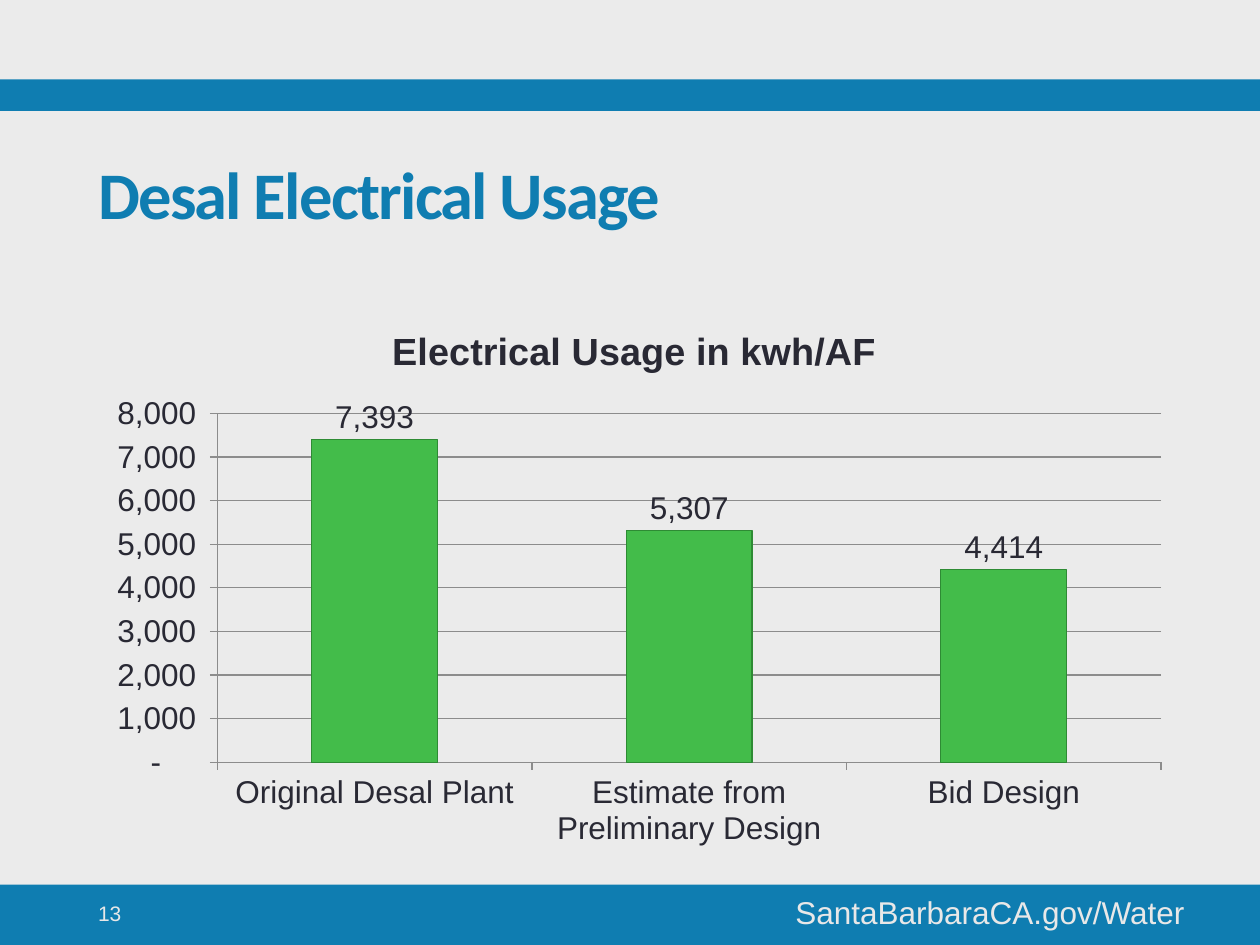
"""Build the slide that compares desal electrical usage in a column chart."""
import dataclasses

import pptx
import pptx.chart.data
import pptx.dml.color
import pptx.enum.chart
import pptx.enum.shapes
import pptx.enum.text
import pptx.oxml
import pptx.util

Inches = pptx.util.Inches
Pt = pptx.util.Pt
Align = pptx.enum.text.PP_ALIGN
Anchor = pptx.enum.text.MSO_ANCHOR


def rgb(code):
    return pptx.dml.color.RGBColor.from_string(code)


@dataclasses.dataclass(frozen=True)
class Theme:
    back: object = rgb("EBEBEB")
    blue: object = rgb("0F7DB1")
    pale: object = rgb("E8E8E8")
    ink: object = rgb("292934")
    grid: object = rgb("8C8C8C")
    green: object = rgb("43BC4A")
    edge: object = rgb("2E8B34")
    head: object = Pt(38)
    title: object = Pt(21.6)
    body: object = Pt(18)
    small: object = Pt(12)


theme = Theme()
deck = pptx.Presentation()
deck.slide_width, deck.slide_height = Inches(10), Inches(7.5)
slide = deck.slides.add_slide(deck.slide_layouts[6])
slide.background.fill.solid()
slide.background.fill.fore_color.rgb = theme.back


def add_text(text, *, box, size, color, font="Arial", bold=False,
             align=Align.LEFT, anchor=Anchor.MIDDLE, space=None):
    frame = slide.shapes.add_textbox(*map(Inches, box)).text_frame
    frame.word_wrap = True
    frame.vertical_anchor = anchor
    para = frame.paragraphs[0]
    para.alignment = align
    run = para.add_run()
    run.text = text
    run.font.name, run.font.size, run.font.bold = font, size, bold
    run.font.color.rgb = color
    if space is not None:
        run.font._element.set("spc", str(space))


for top, high in ((0.63, 0.25), (7.02, 0.48)):
    band = slide.shapes.add_shape(
        pptx.enum.shapes.MSO_SHAPE.RECTANGLE,
        Inches(0), Inches(top), deck.slide_width, Inches(high))
    band.shadow.inherit = False
    band.fill.solid()
    band.fill.fore_color.rgb = theme.blue
    band.line.fill.background()

add_text("SantaBarbaraCA.gov/Water", box=(5.4, 7.04, 4.1, 0.4),
         size=theme.body, color=theme.pale, align=Align.RIGHT)
add_text("Desal Electrical Usage", box=(0.68, 0.88, 8.7, 1.02),
         size=theme.head, color=theme.blue, font="Calibri", bold=True,
         anchor=Anchor.BOTTOM, space=-100)
add_text("13", box=(0.68, 7.05, 0.88, 0.4), size=theme.small, color=theme.pale)

name = "Electrical Usage in kwh/AF"
style = '_(* #,##0_);_(* \\(#,##0\\);_(* "-"??_);_('
data = pptx.chart.data.CategoryChartData(number_format=style)
data.categories = ["Original Desal Plant", "Estimate from Preliminary Design", "Bid Design"]
data.add_series(name, (7393, 5307, 4414))
chart = slide.shapes.add_chart(
    pptx.enum.chart.XL_CHART_TYPE.COLUMN_CLUSTERED,
    *map(Inches, (0.68, 2.4, 8.71, 4.4)), data).chart
chart.has_legend = False
chart.font.name, chart.font.size = "Arial", theme.body
chart.font.color.rgb = theme.ink
chart.has_title = True
chart.chart_title.include_in_layout = False
chart.chart_title.text_frame.text = name
font = chart.chart_title.text_frame.paragraphs[0].runs[0].font
font.name, font.size, font.bold = "Arial", theme.title, True
font.color.rgb = theme.ink

scale = chart.value_axis
scale.minimum_scale, scale.maximum_scale, scale.major_unit = 0, 8000, 1000
scale.tick_labels.number_format = style
scale.tick_labels.number_format_is_linked = False
scale.has_major_gridlines = True
for part in (scale, chart.category_axis, scale.major_gridlines):
    part.format.line.color.rgb = theme.grid
    part.format.line.width = Pt(0.75)
for axis in (scale, chart.category_axis):
    axis.major_tick_mark = pptx.enum.chart.XL_TICK_MARK.OUTSIDE

plot = chart.plots[0]
plot.gap_width = 150
plot.vary_by_categories = False
bars = plot.series[0].format
bars.fill.solid()
bars.fill.fore_color.rgb = theme.green
bars.line.color.rgb = theme.edge
bars.line.width = Pt(0.75)
plot.has_data_labels = True
labels = plot.data_labels
labels.show_value = True
labels.number_format = style
labels.number_format_is_linked = False
labels.position = pptx.enum.chart.XL_LABEL_POSITION.OUTSIDE_END

area = chart._chartSpace.chart.plotArea
for old in area.xpath("c:layout"):
    area.remove(old)
sides = "".join(f'<c:{key} val="{val}"/>' for key, val in (
    ("layoutTarget", "inner"), ("xMode", "edge"), ("yMode", "edge"),
    ("x", 0.12), ("y", 0.2), ("w", 0.86), ("h", 0.63)))
area.insert(0, pptx.oxml.parse_xml(
    '<c:layout xmlns:c="http://schemas.openxmlformats.org/drawingml/2006/chart">'
    f"<c:manualLayout>{sides}</c:manualLayout></c:layout>"))

deck.save("out.pptx")
